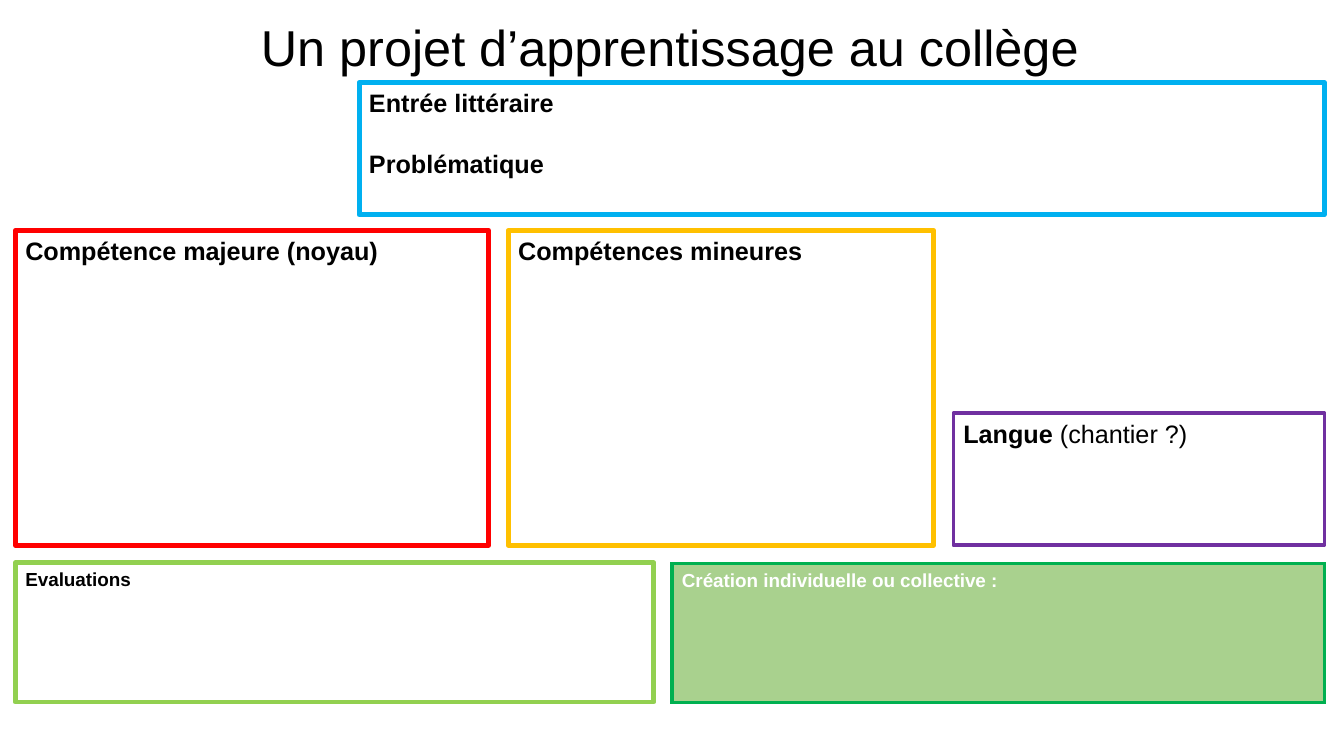
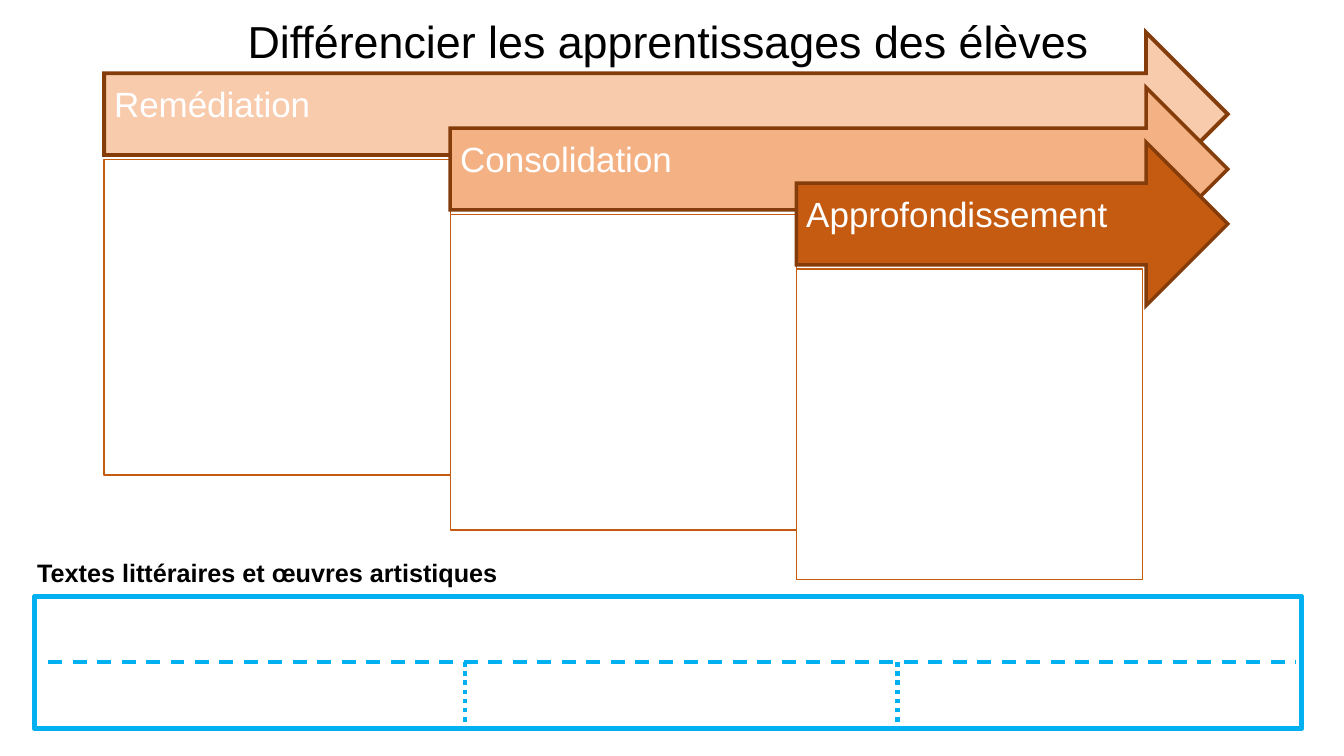
from dataclasses import dataclass

from lxml.etree import SubElement
from pptx import Presentation
from pptx.dml.color import RGBColor
from pptx.enum.dml import MSO_LINE
from pptx.enum.shapes import MSO_CONNECTOR, MSO_SHAPE
from pptx.enum.text import MSO_ANCHOR, PP_ALIGN
from pptx.oxml.ns import qn
from pptx.util import Pt


@dataclass(frozen=True)
class Theme:
    font: str = "Arial"
    black: str = "000000"
    white: str = "FFFFFF"
    blue: str = "00B0F0"
    red: str = "FF0000"
    amber: str = "FFC000"
    purple: str = "7030A0"
    lime: str = "92D050"
    green: str = "00B050"
    sage: str = "A9D18E"
    brown: str = "843C0B"
    rust: str = "C55A11"
    orange: str = "F4B183"
    peach: str = "F8CBAD"
    title: float = 36
    second_title: float = 32
    step: float = 25
    heading: float = 18
    small: float = 13.5
    thick: float = 3.5
    thin: float = 2.5
    hairline: float = 1


THEME = Theme()


class SlideBuilder:
    def __init__(self, theme):
        self.theme = theme
        self.deck = Presentation()
        self.deck.slide_width, self.deck.slide_height = Pt(960), Pt(540)
        self.page = None

    def new_page(self):
        self.page = self.deck.slides.add_slide(self.deck.slide_layouts[6])

    def style_paragraph(self, para, size, color, bold=False):
        para.font.name = self.theme.font
        para.font.size = Pt(size)
        para.font.bold = bold
        para.font.color.rgb = RGBColor.from_string(color)

    def label(self, text, area, size, bold=False, align=PP_ALIGN.LEFT):
        box = self.page.shapes.add_textbox(*map(Pt, area))
        box.text_frame.word_wrap = True
        para = box.text_frame.paragraphs[0]
        para.text = text
        para.alignment = align
        self.style_paragraph(para, size, self.theme.black, bold)

    def title(self, text, area, size):
        self.label(text, area, size, align=PP_ALIGN.CENTER)

    def shape(self, area, line, width, fill=None, kind=MSO_SHAPE.RECTANGLE, sharp=False):
        """Add an outlined preset shape; sharp gives it mitred corners."""
        shape = self.page.shapes.add_shape(kind, *map(Pt, area))
        shape.shadow.inherit = False
        if fill:
            shape.fill.solid()
            shape.fill.fore_color.rgb = RGBColor.from_string(fill)
        else:
            shape.fill.background()
        shape.line.color.rgb = RGBColor.from_string(line)
        shape.line.width = Pt(width)
        if sharp:
            SubElement(shape.line._get_or_add_ln(), qn("a:miter"), lim="800000")
        return shape

    def frame(self, area, line, headings, size=THEME.heading, color=THEME.black,
              note=None, **look):
        """Add a rectangle with bold headings at its top, one line apart."""
        shape = self.shape(area, line, **look)
        shape.text_frame.vertical_anchor = MSO_ANCHOR.TOP
        for index, heading in enumerate(headings):
            para = shape.text_frame.paragraphs[0] if index == 0 else shape.text_frame.add_paragraph()
            para.alignment = PP_ALIGN.LEFT
            para.add_run().text = heading
            self.style_paragraph(para, size, color, bold=True)
            if index:
                para.space_before = Pt(22)
        if note:
            span = para.add_run()
            span.text = note
            span.font.bold = False

    def step_arrow(self, text, area, fill, width):
        arrow = self.shape(area, self.theme.brown, width, fill,
                           MSO_SHAPE.RIGHT_ARROW, sharp=True)
        frame = arrow.text_frame
        frame.vertical_anchor = MSO_ANCHOR.MIDDLE
        frame.margin_left = frame.margin_top = Pt(7.2)
        frame.margin_right, frame.margin_bottom = Pt(20), Pt(18.5)
        para = frame.paragraphs[0]
        para.text = text
        para.alignment = PP_ALIGN.LEFT
        para.line_spacing = 0.9
        self.style_paragraph(para, self.theme.step, self.theme.white)

    def rule(self, start, end, width, dash):
        line = self.page.shapes.add_connector(MSO_CONNECTOR.STRAIGHT, *map(Pt, start + end))
        line.line.color.rgb = RGBColor.from_string(self.theme.blue)
        line.line.width = Pt(width)
        line.line.dash_style = dash
        SubElement(line._element.spPr, qn("a:effectLst"))


def build_project(builder):
    theme = builder.theme
    builder.new_page()
    builder.title("Un projet d’apprentissage au collège", (11, 8, 935, 51), theme.title)
    builder.frame((256.5, 59, 689.5, 94.5), theme.blue,
                  ["Entrée littéraire", "Problématique"], width=theme.thick)
    builder.frame((11, 164.5, 338, 225), theme.red,
                  ["Compétence majeure (noyau)"], width=theme.thick)
    builder.frame((363, 164.5, 304, 225), theme.amber,
                  ["Compétences mineures"], width=theme.thick)
    builder.frame((681, 295, 265, 94.5), theme.purple, ["Langue"],
                  note=" (chantier ?)", width=theme.thin)
    builder.frame((11, 402, 456, 99.5), theme.lime, ["Evaluations"],
                  theme.small, width=theme.thick)
    builder.frame((480, 402.5, 466, 99.5), theme.green,
                  ["Création individuelle ou collective :"], theme.small, theme.white,
                  width=theme.thin, fill=theme.sage, sharp=True)


def build_differentiation(builder):
    theme = builder.theme
    builder.new_page()
    steps = [
        ("Remédiation", theme.peach, 2.75, 225.5),
        ("Consolidation", theme.orange, theme.thin, 225.5),
        ("Approfondissement", theme.rust, theme.thin, 222),
    ]
    panel_width, arrow_tip = 247.2, 877
    for index, (text, fill, width, panel_height) in enumerate(steps):
        left, top = 74.4 + index * panel_width, 23.2 + index * 39.2
        builder.step_arrow(text, (left, top, arrow_tip - left, 116.8), fill, width)
        builder.shape((left, top + 90.6, panel_width, panel_height), theme.rust,
                      theme.hairline, theme.white)
    builder.title("Différencier les apprentissages des élèves",
                  (120, 6, 715, 46), theme.second_title)

    builder.shape((24.5, 426, 905.5, 94.5), theme.blue, theme.thick)
    builder.label("Textes littéraires et œuvres artistiques",
                  (19.5, 394.5, 380, 29), theme.heading, bold=True)
    middle = 473
    for x in (332, 641):
        builder.rule((x, middle), (x, 520.5), 3.25, MSO_LINE.ROUND_DOT)
    builder.rule((34.5, middle), (926, middle), theme.thin, MSO_LINE.DASH)


def main():
    builder = SlideBuilder(THEME)
    build_project(builder)
    build_differentiation(builder)
    builder.deck.save("out.pptx")


if __name__ == "__main__":
    main()
